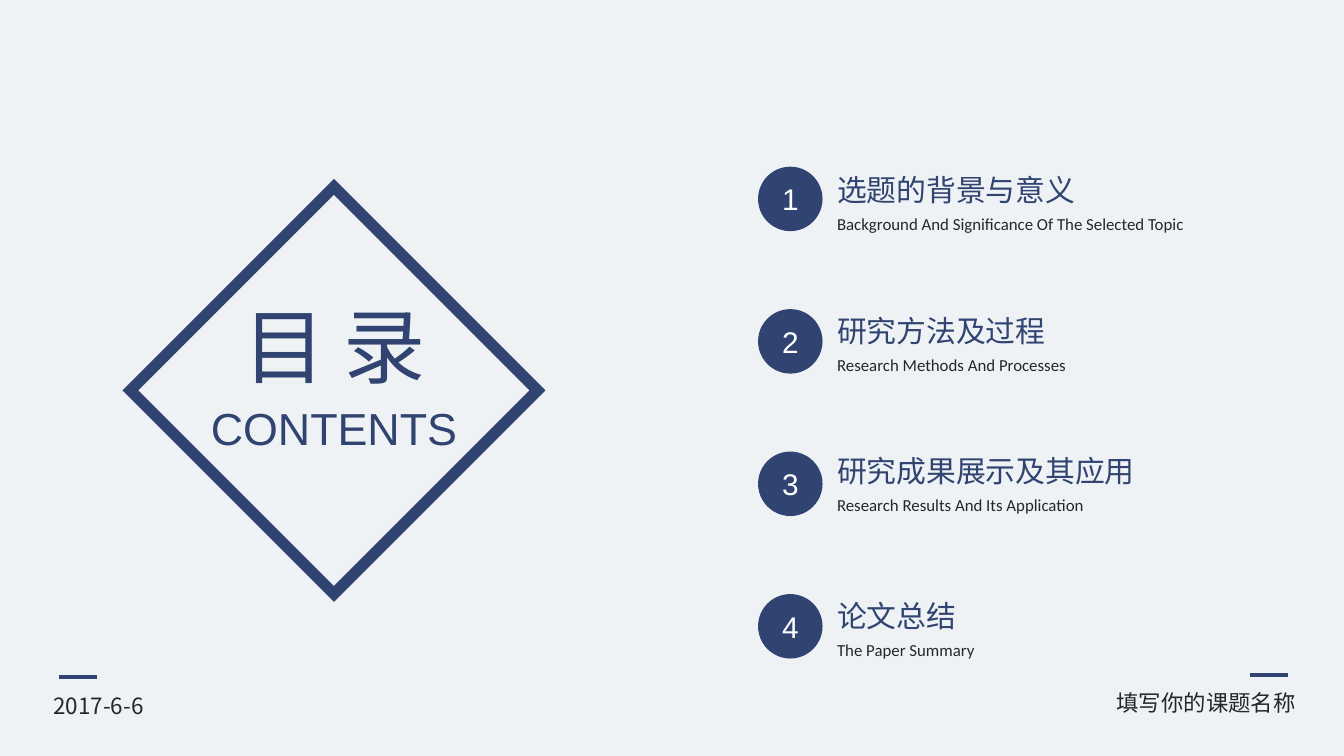
import pptx
import pptx.dml.color
import pptx.enum.shapes
import pptx.enum.text
import pptx.util
from lxml import etree
from pptx.oxml.ns import qn

NAVY, INK, WHITE, PALE = "304371", "262626", "FFFFFF", "EEF2F5"
CJK = "Noto Sans CJK SC"
ALIGN = pptx.enum.text.PP_ALIGN
ANCHOR = pptx.enum.text.MSO_ANCHOR
SHAPE = pptx.enum.shapes.MSO_SHAPE
inches = pptx.util.Inches


def color(hex_string):
    return pptx.dml.color.RGBColor.from_string(hex_string)


def write(shape, text, size, font_name, hex_string, align=ALIGN.LEFT, **frame_format):
    """Put one formatted line of text in a shape; frame_format overrides the frame defaults."""
    frame = shape.text_frame
    defaults = {
        "word_wrap": False,
        "auto_size": pptx.enum.text.MSO_AUTO_SIZE.SHAPE_TO_FIT_TEXT,
        "vertical_anchor": ANCHOR.TOP,
    }
    for name, value in {**defaults, **frame_format}.items():
        setattr(frame, name, value)
    paragraph = frame.paragraphs[0]
    paragraph.alignment = align
    run = paragraph.add_run()
    run.text = text
    for name, value in {"size": pptx.util.Pt(size), "name": font_name, "bold": False}.items():
        setattr(run.font, name, value)
    run.font.color.rgb = color(hex_string)
    east_asian = etree.SubElement(run.font._element, qn("a:ea"))
    east_asian.set("typeface", font_name)


presentation = pptx.Presentation()
presentation.slide_width, presentation.slide_height = inches(10), inches(10 * 9 / 16)
slide = presentation.slides.add_slide(presentation.slide_layouts[5])
slide.background.fill.solid()
slide.background.fill.fore_color.rgb = color(PALE)
shapes = slide.shapes

# Diamond with the slide title
diamond = shapes.add_shape(SHAPE.DIAMOND, *map(inches, (0.97, 1.39, 3.03, 3.03)))
diamond.shadow.inherit = False
diamond.fill.background()
diamond.line.color.rgb = color(NAVY)
diamond.line.width = pptx.util.Pt(6)
miter = etree.SubElement(diamond.line._get_or_add_ln(), qn("a:miter"))
miter.set("lim", "800000")

title = shapes.title
title_box = {"left": 1.68, "top": 2.15, "width": 1.62, "height": 0.84}
for name, value in title_box.items():
    setattr(title, name, inches(value))
write(title, "目 录", 44, CJK, NAVY, ALIGN.CENTER)

# Single lines of text: subtitle and footer
for text, box, size, font_name, hex_string, align in (
    ("CONTENTS", (1.46, 2.93, 2.05, 0.5), 24, "Arial", NAVY, ALIGN.CENTER),
    ("2017-6-6", (0.3, 5.1, 0.94, 0.3), 12, CJK, INK, ALIGN.LEFT),
    ("填写你的课题名称", (8.19, 5.08, 1.55, 0.3), 12, CJK, INK, ALIGN.RIGHT),
):
    write(shapes.add_textbox(*map(inches, box)), text, size, font_name, hex_string, align)

# Footer dashes
for left, top in ((0.44, 5.04), (9.3, 5.02)):
    dash = shapes.add_connector(
        pptx.enum.shapes.MSO_CONNECTOR.STRAIGHT, *map(inches, (left, top, left + 0.28, top))
    )
    dash.line.color.rgb = color(NAVY)
    dash.line.width = pptx.util.Pt(2.25)
    etree.SubElement(dash._element.spPr, qn("a:effectLst"))

# Numbered chapters: circles on an even pitch, headings with their own tops
first_top, pitch, diameter = 1.24, 1.06, 0.48
circle_left, text_left, subtitle_drop = 5.64, 6.13, 0.31
chapters = (
    ("选题的背景与意义", 2, "Background And Significance Of The Selected Topic", 2.8, 1.23),
    ("研究方法及过程", 1.77, "Research Methods And Processes", 1.91, 2.28),
    ("研究成果展示及其应用", 2.45, "Research Results And Its Application", 2.04, 3.32),
    ("论文总结", 1.1, "The Paper Summary", 1.23, 4.4),
)
for row, (heading, heading_width, subtitle, subtitle_width, top) in enumerate(chapters):
    circle = shapes.add_shape(
        SHAPE.OVAL, *map(inches, (circle_left, first_top + row * pitch, diameter, diameter))
    )
    circle.shadow.inherit = False
    circle.fill.solid()
    circle.fill.fore_color.rgb = color(NAVY)
    circle.line.fill.background()
    write(circle, str(row + 1), 16, "Arial", WHITE, ALIGN.CENTER,
          auto_size=pptx.enum.text.MSO_AUTO_SIZE.NONE, vertical_anchor=ANCHOR.MIDDLE)

    heading_box = shapes.add_textbox(*map(inches, (text_left, top, heading_width, 0.37)))
    write(heading_box, heading, 16, CJK, NAVY)
    subtitle_box = shapes.add_textbox(
        *map(inches, (text_left, top + subtitle_drop, subtitle_width, 0.25))
    )
    write(subtitle_box, subtitle, 9, "Calibri", INK)

presentation.save("out.pptx")
